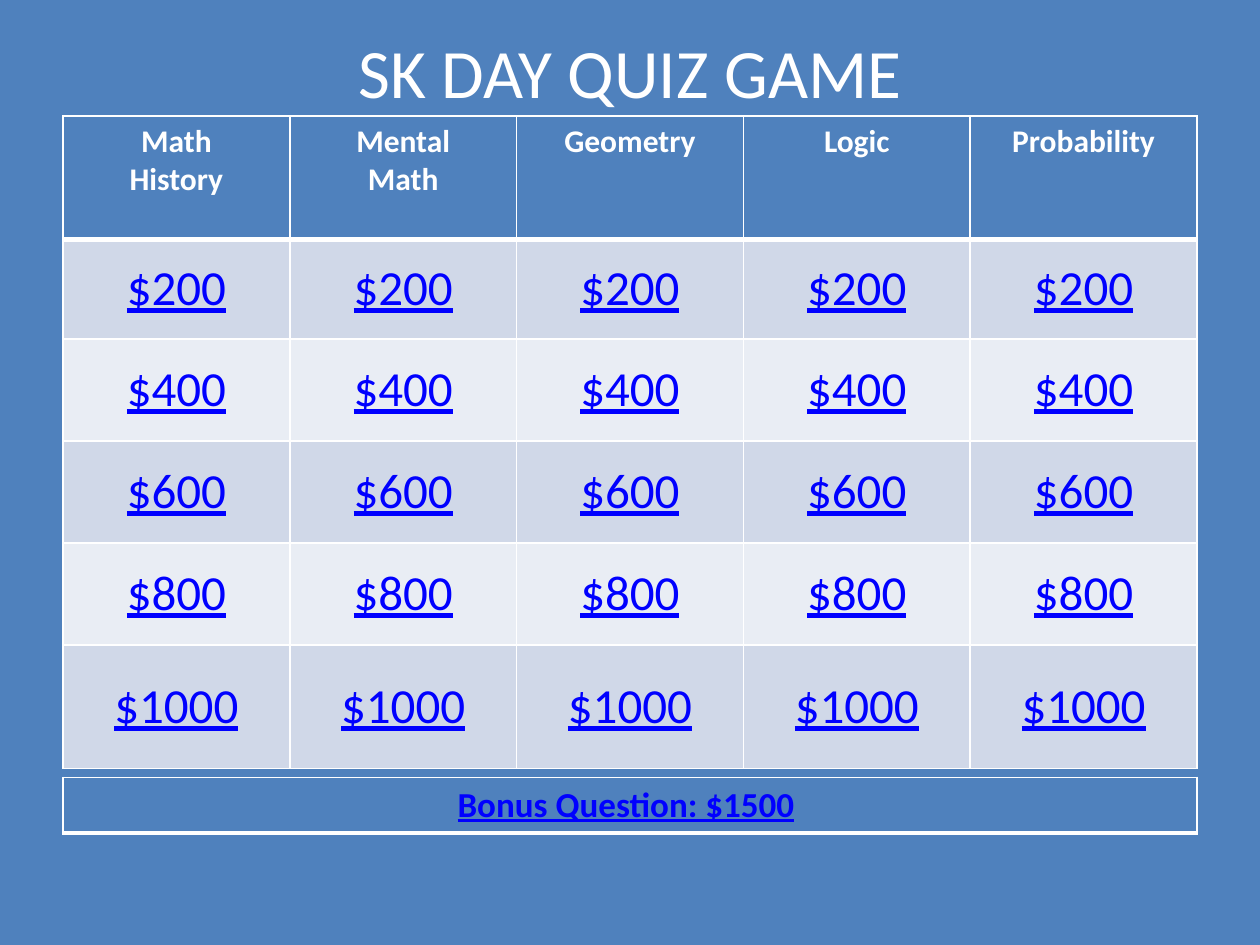
from dataclasses import dataclass

from lxml import etree
from pptx import Presentation
from pptx.dml.color import RGBColor
from pptx.enum.text import MSO_ANCHOR, PP_ALIGN
from pptx.oxml.ns import qn
from pptx.util import Inches, Pt

CENTER = PP_ALIGN.CENTER
TOP, MIDDLE = MSO_ANCHOR.TOP, MSO_ANCHOR.MIDDLE

BLUE = RGBColor(0x4F, 0x81, 0xBD)
WHITE = RGBColor(0xFF, 0xFF, 0xFF)
LINK = RGBColor(0x00, 0x00, 0xFF)
DARK = RGBColor(0xD0, 0xD8, 0xE8)
LIGHT = RGBColor(0xE9, 0xED, 0xF4)
FONT = "Calibri"
LEFT, WIDTH = 0.5, 9
THIN, THICK = 1, 3

TOPICS = ["Math\nHistory", "Mental\nMath", "Geometry", "Logic", "Probability"]
PRIZES = ["$200", "$400", "$600", "$800", "$1000"]


@dataclass
class Style:
    size: float
    color: RGBColor
    fill: RGBColor
    bold: bool = False
    under: bool = False
    anchor: MSO_ANCHOR = TOP
    top: int = THIN
    base: int = THIN


@dataclass
class Row:
    texts: list[str]
    height: float
    style: Style


def set_font(para, size: float, color: RGBColor, bold=False, under=False) -> None:
    para.alignment = CENTER
    font = para.font
    font.name, font.size, font.bold, font.underline = FONT, Pt(size), bold, under
    font.color.rgb = color


def add_edges(cell, top: int, base: int) -> None:
    props = cell._tc.get_or_add_tcPr()
    edges = {"a:lnL": THIN, "a:lnR": THIN, "a:lnT": top, "a:lnB": base}
    # Edges must come before the fill
    for spot, (tag, width) in enumerate(edges.items()):
        line = etree.Element(qn(tag), w=str(Pt(width)))
        fill = etree.SubElement(line, qn("a:solidFill"))
        etree.SubElement(fill, qn("a:srgbClr"), val=str(WHITE))
        props.insert(spot, line)


def fill_cell(cell, text: str, style: Style) -> None:
    cell.text = text
    cell.vertical_anchor = style.anchor
    cell.fill.solid()
    cell.fill.fore_color.rgb = style.fill
    for para in cell.text_frame.paragraphs:
        set_font(para, style.size, style.color, style.bold, style.under)
    add_edges(cell, style.top, style.base)


def add_grid(slide, top: float, rows: list[Row]):
    count = len(rows[0].texts)
    height = sum(row.height for row in rows)
    grid = slide.shapes.add_table(len(rows), count, Inches(LEFT), Inches(top),
                                  Inches(WIDTH), Inches(height)).table
    for r, row in enumerate(rows):
        grid.rows[r].height = Inches(row.height)
        for c, text in enumerate(row.texts):
            fill_cell(grid.cell(r, c), text, row.style)
    return grid


def main() -> None:
    deck = Presentation()
    deck.slide_width, deck.slide_height = Inches(10), Inches(7.5)
    slide = deck.slides.add_slide(deck.slide_layouts[5])
    slide.background.fill.solid()
    slide.background.fill.fore_color.rgb = BLUE

    # Title
    title = slide.shapes.title
    title.left, title.top = Inches(LEFT), Inches(0.3)
    title.width, title.height = Inches(WIDTH), Inches(0.53)
    title.text_frame.text = "SK DAY QUIZ GAME"
    title.text_frame.vertical_anchor = MIDDLE
    set_font(title.text_frame.paragraphs[0], 39.6, WHITE)

    # Game board
    rows = [Row(TOPICS, 0.98, Style(18, WHITE, BLUE, bold=True, base=THICK))]
    heights = [0.79, 0.81, 0.81, 0.81, 0.98]
    for i, (prize, height) in enumerate(zip(PRIZES, heights)):
        style = Style(28, LINK, LIGHT if i % 2 else DARK, under=True,
                      anchor=MIDDLE, top=THIN if i else THICK)
        rows.append(Row([prize] * len(TOPICS), height, style))
    add_grid(slide, 0.92, rows)

    # Bonus bar
    style = Style(20, LINK, BLUE, bold=True, under=True, base=THICK)
    bar = add_grid(slide, 6.17, [Row(["Bonus Question: $1500"], 0.43, style)])
    tail = bar.cell(0, 0).text_frame.paragraphs[0].add_run()
    tail.text = " "
    tail.font.underline = False

    deck.save("out.pptx")


if __name__ == "__main__":
    main()
